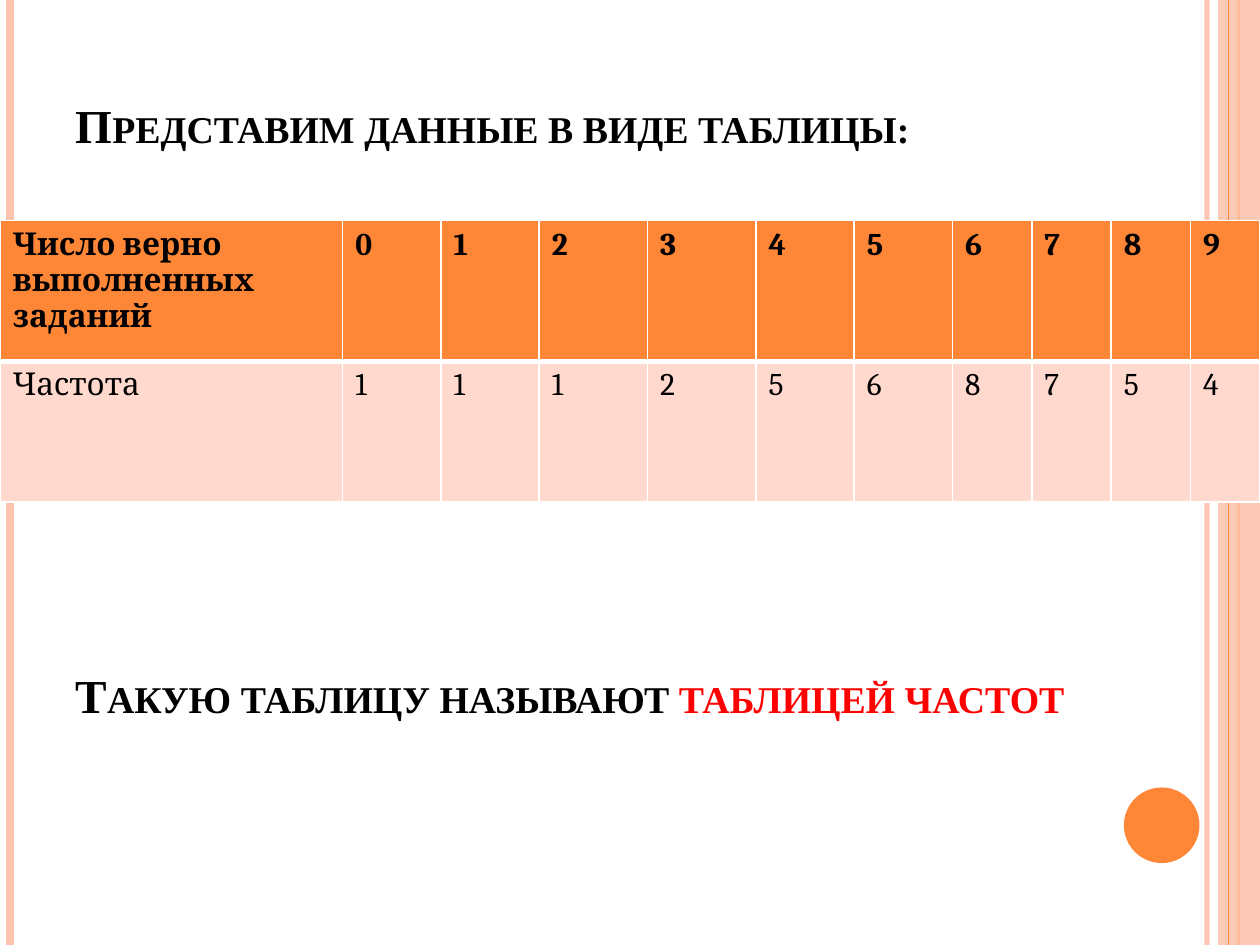
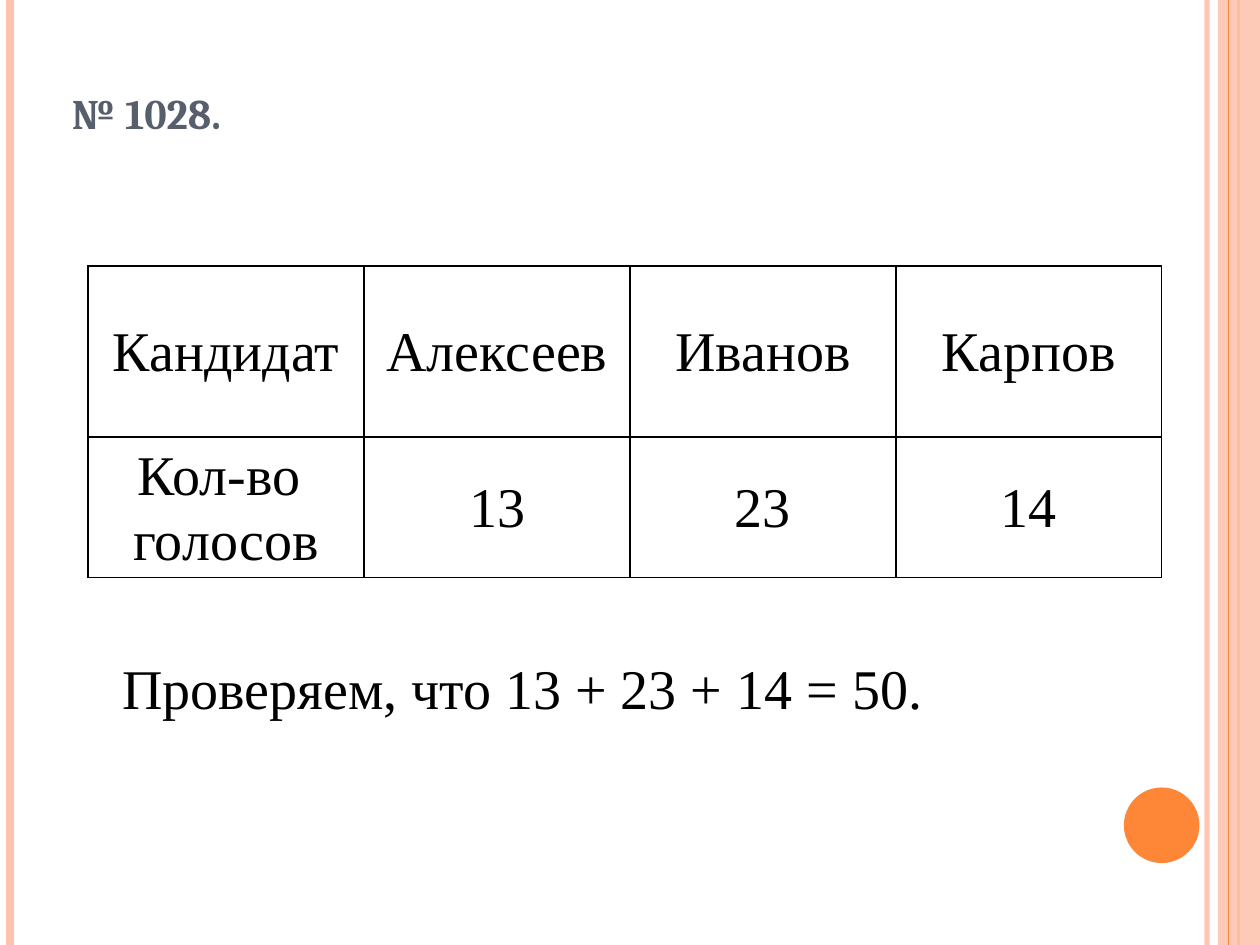
from dataclasses import dataclass

from lxml import etree
from pptx import Presentation
from pptx import util as u
from pptx.dml.color import RGBColor
from pptx.enum import shapes, text
from pptx.oxml import ns

CELL = u.Inches(0.25)
COLUMNS, ROWS = 40, 30
ORANGE, PEACH, BLUSH = "FE8637", "FEC3AE", "FFD9CE"
BLACK, WHITE, RED, SLATE = "000000", "FFFFFF", "FF0000", "575F6D"
SERIF, HEADING = "Times New Roman", "Cambria"
SIDES = ("L", "R", "T", "B")


@dataclass
class Box:
    """Area of the page in grid columns and rows."""
    left: float
    top: float
    width: float
    height: float

    def inner(self, left, top, width, height):
        """Return an area placed relative to this one."""
        return Box(self.left + left, self.top + top, width, height)

    def lengths(self):
        """Return left, top, width and height in slide units."""
        return [round(value * CELL) for value in
                (self.left, self.top, self.width, self.height)]


PAGE = Box(0, 0, COLUMNS, ROWS)


def rgb(code):
    """Turn a hex string into a colour."""
    return RGBColor.from_string(code)


def apply(target, formats):
    """Set each attribute named in a dict of format values."""
    for name, value in formats.items():
        setattr(target, name, value)


def add_span(para, words, size, font, color, bold=False, small=False):
    """Add a formatted run to a paragraph."""
    span = para.add_run()
    span.text = words
    apply(span.font, {"size": u.Pt(size), "name": font, "bold": bold})
    span.font.color.rgb = rgb(color)
    if small:
        span.font._element.set("cap", "small")


def set_opacity(part, percent):
    """Make the solid colour inside a shape partly transparent."""
    color = part._element.spPr.find(f".//{ns.qn('a:srgbClr')}")
    etree.SubElement(color, ns.qn("a:alpha"), val=str(percent * 1000))


def add_rule(page, box, column, color, weight, opacity=100):
    """Draw a vertical line through the whole height of a box."""
    left, top, width, height = box.inner(column, 0, 0, box.height).lengths()
    rule = page.shapes.add_connector(
        shapes.MSO_CONNECTOR.STRAIGHT, left, top, left, top + height)
    rule.line.color.rgb = rgb(color)
    rule.line.width = u.Pt(weight)
    if opacity < 100:
        set_opacity(rule, opacity)
    etree.SubElement(rule._element.spPr, ns.qn("a:effectLst"))


def add_block(page, kind, box, color):
    """Draw a filled shape without outline or shadow."""
    block = page.shapes.add_shape(kind, *box.lengths())
    block.shadow.inherit = False
    block.fill.solid()
    block.fill.fore_color.rgb = rgb(color)
    block.line.fill.background()
    return block


def add_frame(page, box):
    """Draw the side bands and the disc shared by all slides."""
    add_rule(page, box, 38.32, PEACH, 3, 93)
    add_rule(page, box, 0.32, PEACH, 4.5)
    add_rule(page, box, 39.32, ORANGE, 1.5)
    band = add_block(page, shapes.MSO_SHAPE.RECTANGLE,
                     box.inner(38.67, 0, 1.33, box.height), PEACH)
    set_opacity(band, 87)
    add_rule(page, box, 39, ORANGE, 0.75)
    add_block(page, shapes.MSO_SHAPE.OVAL, box.inner(35.68, 25, 2.4, 2.4), ORANGE)


def add_title(page, box, lines, size, font, rise, gap=0):
    """Fill the title with lines of (words, colour) spans above its lower edge."""
    title = page.shapes.title
    apply(title, dict(zip(("left", "top", "width", "height"), box.lengths())))
    frame = title.text_frame
    apply(frame, {"word_wrap": True, "auto_size": text.MSO_AUTO_SIZE.NONE,
                  "vertical_anchor": text.MSO_ANCHOR.BOTTOM,
                  "margin_bottom": round(rise * CELL)})
    for number, spans in enumerate(lines):
        para = frame.add_paragraph() if number else frame.paragraphs[0]
        apply(para, {"alignment": text.PP_ALIGN.LEFT,
                     "space_before": u.Pt(gap if number else 0)})
        for words, color in spans:
            add_span(para, words, size, font, color, bold=True, small=True)


def set_border(cell, color, weights):
    """Draw the four borders of a table cell."""
    properties = cell._tc.get_or_add_tcPr()
    for side, weight in zip(SIDES, weights):
        line = etree.SubElement(properties, ns.qn(f"a:ln{side}"), w=str(u.Pt(weight)))
        fill = etree.SubElement(line, ns.qn("a:solidFill"))
        etree.SubElement(fill, ns.qn("a:srgbClr"), val=color)


def add_grid(page, box, rows, widths, heights, style_cell):
    """Add a table whose columns share the box and style every cell."""
    table = page.shapes.add_table(len(rows), len(widths), *box.lengths()).table
    apply(table, {"first_row": False, "horz_banding": False})
    for column, width in zip(table.columns, widths):
        column.width = round(box.width * CELL * width / sum(widths))
    for row, height in zip(table.rows, heights):
        row.height = round(box.height * CELL * height / sum(heights))
    for number, values in enumerate(rows):
        for cell, words in zip(table.rows[number].cells, values):
            style_cell(cell, words, number)


def style_frequency(cell, words, number):
    """Format a cell of the frequency table."""
    header = number == 0
    set_border(cell, WHITE, (1, 1, 1, 3) if header else (1, 1, 3, 1))
    cell.fill.solid()
    cell.fill.fore_color.rgb = rgb(ORANGE if header else BLUSH)
    add_span(cell.text_frame.paragraphs[0], words, 18, HEADING, BLACK, bold=header)


def style_vote(cell, words, number):
    """Format a cell of the vote table."""
    set_border(cell, BLACK, (1, 1, 1, 1))
    cell.fill.background()
    cell.vertical_anchor = text.MSO_ANCHOR.MIDDLE
    apply(cell, {f"margin_{side}": u.Inches(0.04)
                 for side in ("left", "top", "right", "bottom")})
    frame = cell.text_frame
    for position, line in enumerate(words.split("\n")):
        para = frame.add_paragraph() if position else frame.paragraphs[0]
        apply(para, {"alignment": text.PP_ALIGN.CENTER, "line_spacing": 1.05})
        add_span(para, line, 32, SERIF, BLACK)


def add_check(page, box, words):
    """Add the line that checks the sum of the votes."""
    frame = page.shapes.add_textbox(*box.lengths()).text_frame
    apply(frame, {"word_wrap": True, "vertical_anchor": text.MSO_ANCHOR.MIDDLE})
    para = frame.paragraphs[0]
    para._p.get_or_add_pPr().set("indent", str(CELL))
    add_span(para, words, 32, SERIF, BLACK)


def new_page(deck):
    """Add a slide with a title and the shared frame."""
    page = deck.slides.add_slide(deck.slide_layouts[5])
    add_frame(page, PAGE)
    return page


def build_frequency_page(deck, box):
    """Build the slide with the frequency table."""
    page = new_page(deck)
    lines = [[("Представим данные в виде таблицы:", BLACK)],
             [("Такую таблицу называют ", BLACK), ("таблицей частот", RED)]]
    add_title(page, box.inner(2, 1.2, 32.68, 27.24), lines, 27, SERIF, 5.5, gap=293)
    rows = [["Число верно выполненных заданий", *map(str, range(10))],
            ["Частота", *"1112568754"]]
    widths = [10.88, 3.12, 3.12, 3.44, 3.44, 3.12, 3.12, 2.52, 2.52, 2.52, 2.2]
    add_grid(page, box.inner(0, 7, box.width, 8.94), rows, widths, [1, 1],
             style_frequency)


def build_vote_page(deck, box):
    """Build the slide with the votes for each candidate."""
    page = new_page(deck)
    add_title(page, box.inner(1.88, 1.56, 32.68, 5), [[("№ 1028.", SLATE)]],
              30, HEADING, 2.12)
    rows = [["Кандидат", "Алексеев", "Иванов", "Карпов"],
            ["Кол-во \nголосов", "13", "23", "14"]]
    add_grid(page, box.inner(2.8, 8.44, 34.08, 9.9), rows,
             [2.19, 2.11, 2.11, 2.11], [1.36, 1.12], style_vote)
    add_check(page, box.inner(2.48, 20.36, 29, 2.92),
              "Проверяем, что 13 + 23 + 14 = 50.")


def main():
    """Build and save the deck."""
    deck = Presentation()
    apply(deck, {"slide_width": COLUMNS * CELL, "slide_height": ROWS * CELL})
    build_frequency_page(deck, PAGE)
    build_vote_page(deck, PAGE)
    deck.save("out.pptx")


if __name__ == "__main__":
    main()
